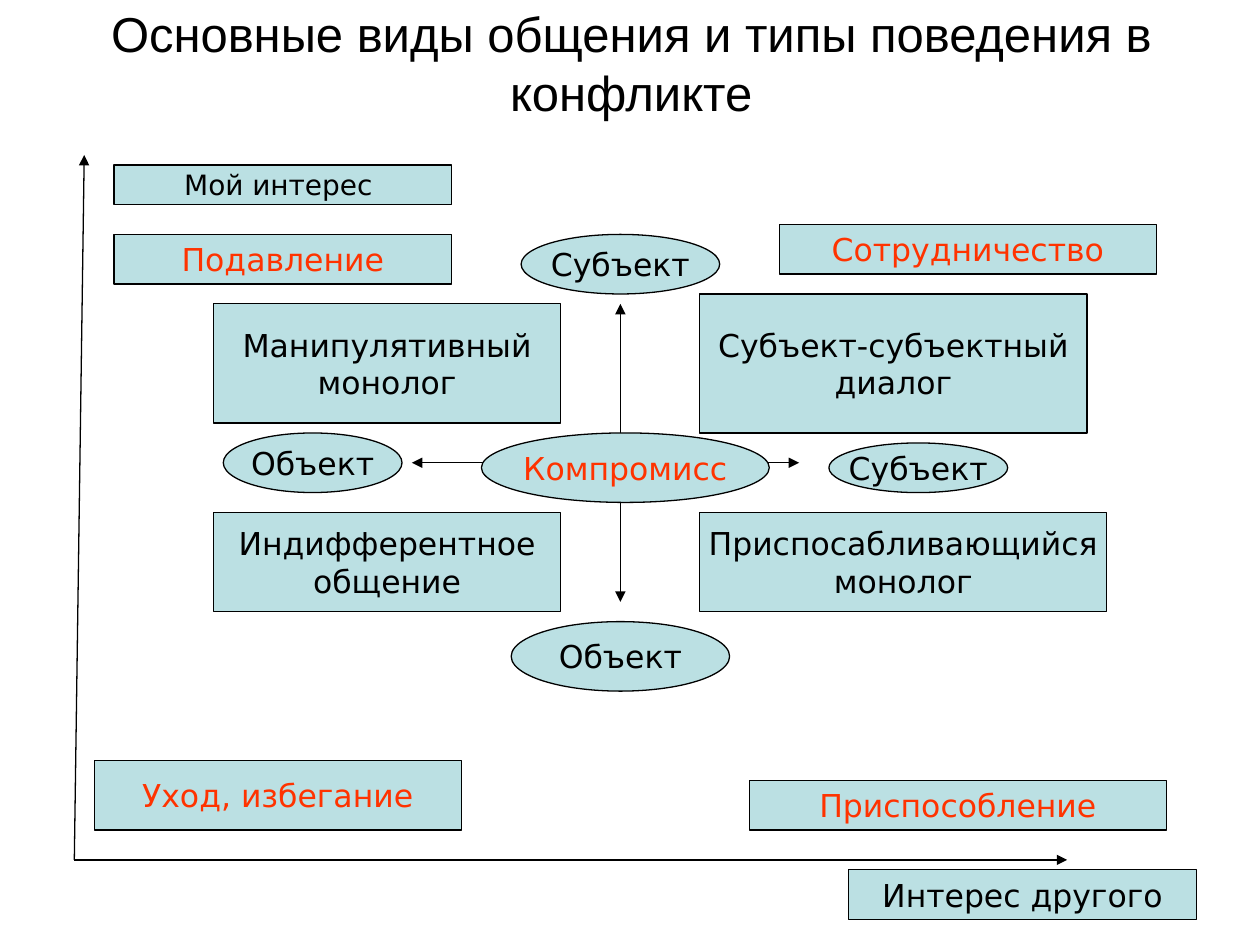
from lxml import etree
from pptx import Presentation
from pptx.dml.color import RGBColor
from pptx.enum import shapes, text
from pptx.oxml import ns
from pptx.util import Inches, Pt

INK, RED, FILL = "000000", "FF3300", "BBE0E3"
RECT, OVAL = shapes.MSO_SHAPE.RECTANGLE, shapes.MSO_SHAPE.OVAL


def color(code):
    return RGBColor.from_string(code)


class Chart:
    """Style and slide; the plot is a grid of 100 columns by 71 rows."""
    left, top, step = 0.59, 1.23, 7.88 / 100
    font, size, line = "DejaVu Sans", 18, 0.75

    def __init__(self, deck):
        self.slide = deck.slides.add_slide(deck.slide_layouts[5])

    def spot(self, col, row):
        return (Inches(self.left + col * self.step),
                Inches(self.top + row * self.step))

    def span(self, count):
        return Inches(count * self.step)

    def label(self, frame, words, font, size, hue):
        frame.text = words
        frame.vertical_anchor = text.MSO_ANCHOR.MIDDLE
        for para in frame.paragraphs:
            para.alignment = text.PP_ALIGN.CENTER
            para.font.name, para.font.size = font, Pt(size)
            para.font.color.rgb = color(hue)

    def title(self, words, left, top, width, height):
        box = self.slide.shapes.title
        box.left, box.top = Inches(left), Inches(top)
        box.width, box.height = Inches(width), Inches(height)
        box.text_frame.auto_size = text.MSO_AUTO_SIZE.NONE
        self.label(box.text_frame, words, "Arial", 28, INK)

    def node(self, kind, words, col, row, wide, high, hue=INK, size=size):
        box = self.slide.shapes.add_shape(
            kind, *self.spot(col, row), self.span(wide), self.span(high))
        box.shadow.inherit = False
        box.fill.solid()
        box.fill.fore_color.rgb = color(FILL)
        box.line.color.rgb = color(INK)
        box.line.width = Pt(self.line)
        box.text_frame.word_wrap = False
        self.label(box.text_frame, words, self.font, size, hue)

    def arrow(self, start, end, ends=("tailEnd",)):
        link = self.slide.shapes.add_connector(
            shapes.MSO_CONNECTOR.STRAIGHT, *self.spot(*start), *self.spot(*end))
        link.line.color.rgb = color(INK)
        link.line.width = Pt(self.line)
        props = link._element.spPr
        for tip in ends:
            etree.SubElement(props.find(ns.qn("a:ln")), ns.qn("a:" + tip),
                             type="triangle")
        etree.SubElement(props, ns.qn("a:effectLst"))


def main():
    deck = Presentation()
    deck.slide_width, deck.slide_height = Inches(10), Inches(7.5)
    chart = Chart(deck)
    chart.title("Основные виды общения и типы поведения в конфликте",
                0.51, 0, 9, 0.99)

    # Inner cross
    both = ("headEnd", "tailEnd")
    chart.arrow((34, 31), (73, 31), both)
    chart.arrow((55, 15), (55, 45), both)

    # Roles at the ends of the cross
    for role in (("Субъект", 76, 29, 18, 5), ("Объект", 15, 28, 18, 6),
                 ("Субъект", 45, 8, 20, 6), ("Объект", 44, 47, 22, 7)):
        chart.node(OVAL, *role)

    # Kinds of communication, one per quadrant
    for kind in (("Субъект-субъектный\nдиалог", 63, 14, 39, 14),
                 ("Манипулятивный\nмонолог", 14, 15, 35, 12),
                 ("Индифферентное\nобщение", 14, 36, 35, 10),
                 ("Приспосабливающийся\nмонолог", 63, 36, 41, 10)):
        chart.node(RECT, *kind)

    # Outer axes and their names
    chart.arrow((0, 71), (1, 0))
    chart.arrow((0, 71), (100, 71))
    chart.node(RECT, "Мой интерес ", 4, 1, 34, 4, size=16)
    chart.node(RECT, "Интерес другого", 78, 72, 35, 5)

    # Behaviour in conflict
    for way in (("Подавление", 4, 8, 34, 5), ("Уход, избегание", 2, 61, 37, 7),
                ("Сотрудничество", 71, 7, 38, 5),
                ("Приспособление", 68, 63, 42, 5)):
        chart.node(RECT, *way, hue=RED)
    chart.node(OVAL, "Компромисс", 41, 28, 29, 7, hue=RED)

    deck.save("out.pptx")


if __name__ == "__main__":
    main()
